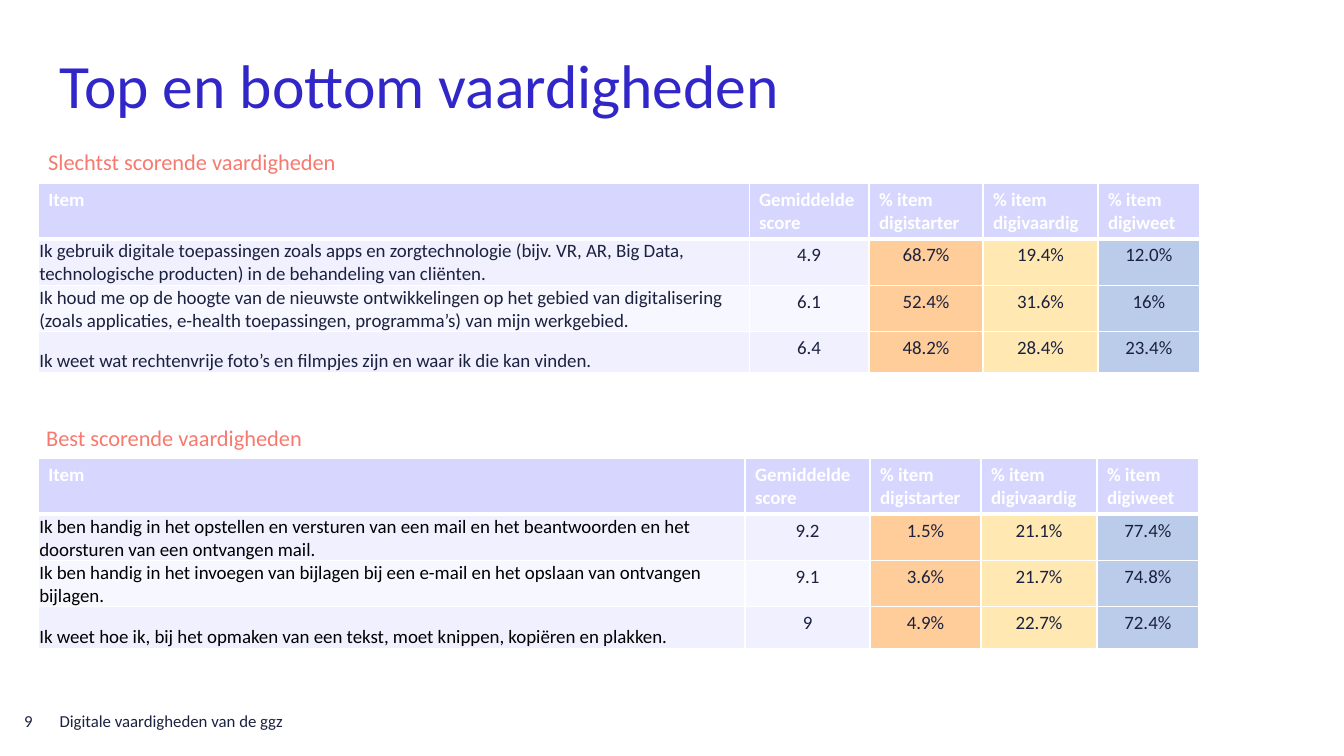
"""Build the slide with the lowest and highest scoring digital skills."""
from lxml.etree import SubElement
from pptx import Presentation
from pptx.dml.color import RGBColor
from pptx.enum.text import MSO_ANCHOR as Anchor, PP_ALIGN as Align
from pptx.oxml.ns import qn
from pptx.util import Inches, Pt

COLORS = {
    "title": "3127C8", "text": "1B213E", "heading": "F7796F",
    "white": "FFFFFF", "black": "000000", "header": "D6D6FF",
    "odd": "F0F0FF", "even": "F7F7FF",
    "starter": "FFAD57", "vaardig": "FFD97F", "weet": "8FAADC",
}
HEADERS = ["Item", "Gemiddelde score", "% item digistarter",
           "% item digivaardig", "% item digiweet"]
LEVELS = ["starter", "vaardig", "weet"]
ROW_HEIGHTS = [0.38, 0.41, 0.41, 0.41]
SECTIONS = [
    {"heading": "Slechtst scorende vaardigheden", "heading_at": (0.38, 1.42),
     "top": 1.82, "widths": [7.05, 1.19, 1.13, 1.14, 1.01], "item_color": "text",
     "rows": [
         ["Ik gebruik digitale toepassingen zoals apps en zorgtechnologie (bijv. VR, AR, "
          "Big Data, technologische producten) in de behandeling van cliënten.",
          "4.9", "68.7%", "19.4%", "12.0%"],
         ["Ik houd me op de hoogte van de nieuwste ontwikkelingen op het gebied van "
          "digitalisering (zoals applicaties, e-health toepassingen, programma’s) "
          "van mijn werkgebied.", "6.1", "52.4%", "31.6%", "16%"],
         ["Ik weet wat rechtenvrije foto’s en filmpjes zijn en waar ik die kan vinden.",
          "6.4", "48.2%", "28.4%", "23.4%"],
     ]},
    {"heading": "Best scorende vaardigheden", "heading_at": (0.36, 4.16),
     "top": 4.55, "widths": [7.01, 1.24, 1.1, 1.15, 1.01], "item_color": "black",
     "rows": [
         ["Ik ben handig in het opstellen en versturen van een mail en het beantwoorden "
          "en het doorsturen van een ontvangen mail.", "9.2", "1.5%", "21.1%", "77.4%"],
         ["Ik ben handig in het invoegen van bijlagen bij een e-mail en het opslaan van "
          "ontvangen bijlagen.", "9.1", "3.6%", "21.7%", "74.8%"],
         ["Ik weet hoe ik, bij het opmaken van een tekst, moet knippen, kopiëren en "
          "plakken.", "9", "4.9%", "22.7%", "72.4%"],
     ]},
]


def write(frame, text, size, color, bold=False, align=Align.LEFT):
    """Put one formatted paragraph in a text frame."""
    frame.word_wrap = True
    para = frame.paragraphs[0]
    para.alignment = align
    span = para.add_run()
    span.text = text
    for name, value in {"name": "Calibri", "size": Pt(size), "bold": bold}.items():
        setattr(span.font, name, value)
    span.font.color.rgb = RGBColor.from_string(COLORS[color])


def paint(cell, color, bottom_width, alpha=None):
    """Give a cell white borders and a fill."""
    props = cell._tc.get_or_add_tcPr()
    for side, width in {"L": 1, "R": 1, "T": 1, "B": bottom_width}.items():
        line = SubElement(props, qn(f"a:ln{side}"), w=str(Pt(width)))
        SubElement(SubElement(line, qn("a:solidFill")), qn("a:srgbClr"), val=COLORS["white"])
    cell.fill.solid()
    cell.fill.fore_color.rgb = RGBColor.from_string(COLORS[color])
    if alpha:
        shade = props.find(qn("a:solidFill")).find(qn("a:srgbClr"))
        SubElement(shade, qn("a:alpha"), val=str(alpha * 1000))


deck = Presentation()
deck.slide_width, deck.slide_height = Inches(13.33), Inches(7.5)
page = deck.slides.add_slide(deck.slide_layouts[5])

title = page.shapes.title
footer = page.shapes.add_textbox(0, 0, 0, 0)
number = page.shapes.add_textbox(0, 0, 0, 0)
labels = [
    (title, "Top en bottom vaardigheden", 44, "title", (0.59, 0.21, 12.15, 1.25)),
    (footer, "Digitale vaardigheden van de ggz", 12, "text", (0.59, 6.95, 4.22, 0.4)),
    (number, "9", 12, "text", (0.24, 6.95, 0.28, 0.4)),
]
for box, text, size, color, place in labels:
    for name, value in zip(("left", "top", "width", "height"), place):
        setattr(box, name, Inches(value))
    for side in ("left", "top", "right", "bottom"):
        setattr(box.text_frame, f"margin_{side}", 0)
    box.text_frame.vertical_anchor = Anchor.MIDDLE
    write(box.text_frame, text, size, color)

for section in SECTIONS:
    left, top = section["heading_at"]
    heading = page.shapes.add_textbox(Inches(left), Inches(top), Inches(11.16), Inches(0.37))
    write(heading.text_frame, section["heading"], 16, "heading")

    widths = section["widths"]
    table = page.shapes.add_table(
        len(ROW_HEIGHTS), len(widths), Inches(0.38), Inches(section["top"]),
        Inches(sum(widths)), Inches(sum(ROW_HEIGHTS))).table
    for column, width in zip(table.columns, widths):
        column.width = Inches(width)
    for row, height in zip(table.rows, ROW_HEIGHTS):
        row.height = Inches(height)

    for index, label in enumerate(HEADERS):
        cell = table.cell(0, index)
        paint(cell, "header", 3)
        write(cell.text_frame, label, 13.5, "white", bold=True)

    for line_index, (item, score, *shares) in enumerate(section["rows"], start=1):
        band = "odd" if line_index % 2 else "even"
        item_cell = table.cell(line_index, 0)
        for side in ("left", "top", "right"):
            setattr(item_cell, f"margin_{side}", Inches(0.01))
        item_cell.margin_bottom = 0
        item_cell.vertical_anchor = Anchor.BOTTOM
        paint(item_cell, band, 1)
        write(item_cell.text_frame, item, 13.5, section["item_color"])

        score_cell = table.cell(line_index, 1)
        paint(score_cell, band, 1)
        write(score_cell.text_frame, score, 13.5, "text", align=Align.CENTER)

        for index, (level, share) in enumerate(zip(LEVELS, shares), start=2):
            cell = table.cell(line_index, index)
            paint(cell, level, 1, alpha=60)
            write(cell.text_frame, share, 13.5, "text", align=Align.CENTER)

deck.save("out.pptx")
